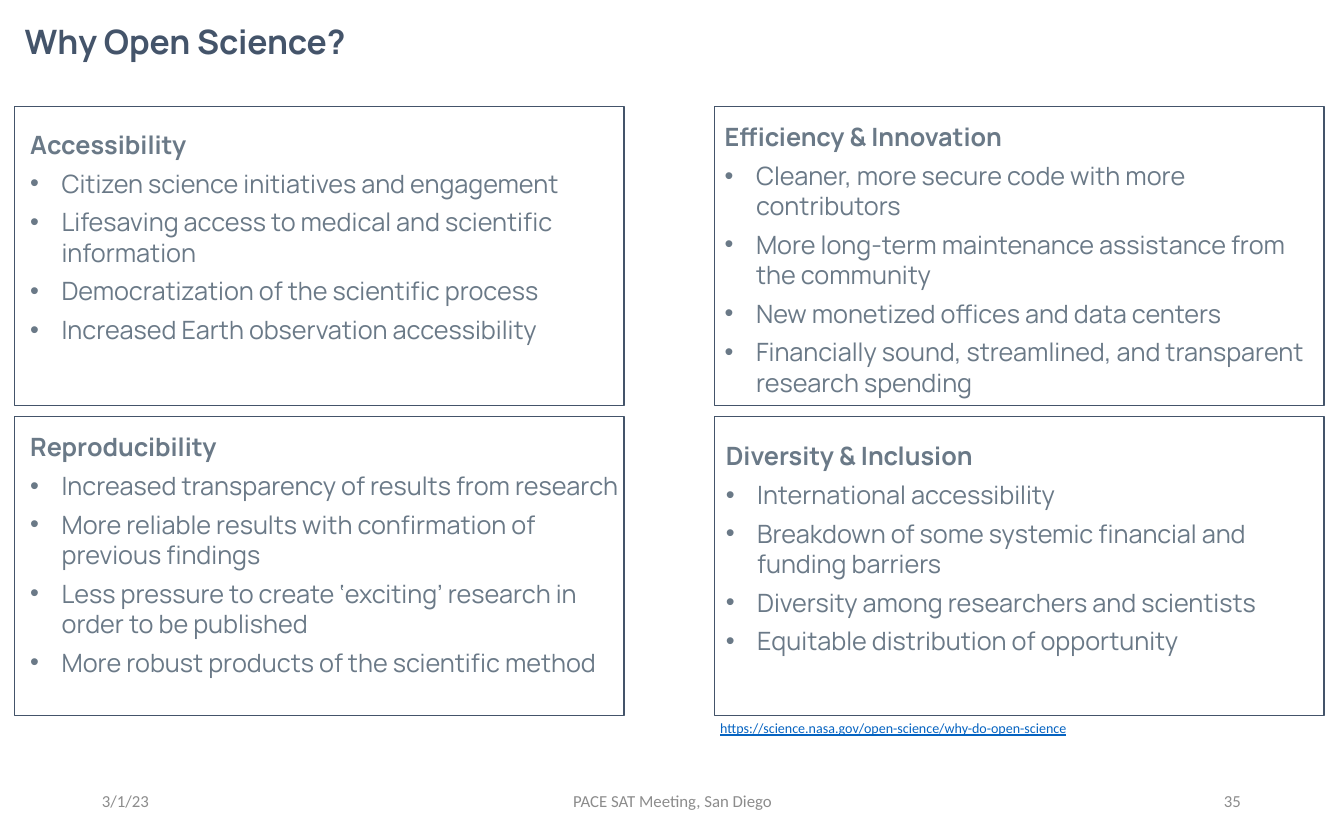
from lxml.etree import SubElement
from pptx import Presentation
from pptx.dml.color import RGBColor
from pptx.enum.shapes import MSO_SHAPE as Shape
from pptx.enum.text import MSO_ANCHOR as Anchor, PP_ALIGN as Align
from pptx.oxml.ns import qn
from pptx.util import Inches, Pt

NAVY, SLATE, GREY, BLUE = "44546A", "6A7987", "8C8C8C", "0563C1"
HEAD = dict(name="Manrope", size=Pt(16.2), bold=True)
BODY = dict(HEAD, bold=False)
TITLE = dict(HEAD, size=Pt(21.6))
FOOT = dict(name="Calibri", size=Pt(10.8))
LINK = dict(name="Calibri", size=Pt(9), underline=True)

# column, row, text box (left, top, width, height), heading, points
PANELS = [
    (1, 0, (6.38, 1.04, 5.49, 2.56), "Efficiency & Innovation", [
        "Cleaner, more secure code with more contributors",
        "More long-term maintenance assistance from the community",
        "New monetized offices and data centers",
        "Financially sound, streamlined, and transparent research spending"]),
    (0, 0, (0.18, 1.11, 5.4, 2.02), "Accessibility", [
        "Citizen science initiatives and engagement",
        "Lifesaving access to medical and scientific information",
        "Democratization of the scientific process",
        "Increased Earth observation accessibility"]),
    (0, 1, (0.18, 3.81, 5.49, 2.29), "Reproducibility", [
        "Increased transparency of results from research",
        "More reliable results with confirmation of previous findings",
        "Less pressure to create ‘exciting’ research in order to be published",
        "More robust products of the scientific method"]),
    (1, 1, (6.39, 3.89, 5.49, 2.02), "Diversity & Inclusion", [
        "International accessibility",
        "Breakdown of some systemic financial and funding barriers",
        "Diversity among researchers and scientists",
        "Equitable distribution of opportunity"]),
]
FOOTER = [
    ((0.82, 6.95, 2.7, 0.4), "3/1/23", Align.LEFT),
    ((3.98, 6.95, 4.05, 0.4), "PACE SAT Meeting, San Diego", Align.CENTER),
    ((8.47, 6.95, 2.7, 0.4), "35", Align.RIGHT),
]
LEFT, TOP, WIDE, HIGH = 0.13, 0.95, 5.44, 2.67
STEP_X, STEP_Y = 6.25, 2.77
INDENT = Inches(0.28)


def color(code):
    return RGBColor.from_string(code)


def add_frame(slide, box, anchor=Anchor.TOP):
    frame = slide.shapes.add_textbox(*map(Inches, box)).text_frame
    frame.word_wrap = True
    frame.vertical_anchor = anchor
    frame.margin_left = frame.margin_right = Inches(0.09)
    frame.margin_top = frame.margin_bottom = Inches(0.045)
    return frame


def write(para, text, style, tint, align=Align.LEFT):
    para.alignment = align
    run = para.add_run()
    run.text = text
    for key, value in style.items():
        setattr(run.font, key, value)
    run.font.color.rgb = color(tint)


def add_bullet(para):
    props = para._p.get_or_add_pPr()
    props.set("marL", str(INDENT))
    props.set("indent", str(-INDENT))
    SubElement(props, qn("a:buFont")).set("typeface", "Arial")
    SubElement(props, qn("a:buChar")).set("char", "•")


def add_panel(slide, col, row, box, head, points):
    frame = add_frame(slide, box)
    para = frame.paragraphs[0]
    para.space_after = Pt(5.4)
    write(para, head, HEAD, SLATE)
    for point in points:
        para = frame.add_paragraph()
        para.space_after = Pt(5.4)
        add_bullet(para)
        write(para, point, BODY, SLATE)

    border = slide.shapes.add_shape(
        Shape.RECTANGLE, Inches(LEFT + col * STEP_X),
        Inches(TOP + row * STEP_Y), Inches(WIDE), Inches(HIGH))
    border.shadow.inherit = False
    border.fill.background()
    border.line.color.rgb = color(NAVY)
    border.line.width = Pt(1)


def main():
    deck = Presentation()
    deck.slide_width, deck.slide_height = Inches(12), Inches(7.5)
    slide = deck.slides.add_slide(deck.slide_layouts[6])

    for box, text, align in FOOTER:
        frame = add_frame(slide, box, Anchor.MIDDLE)
        write(frame.paragraphs[0], text, FOOT, GREY, align)
    title = add_frame(slide, (0.13, 0.14, 3.51, 0.46))
    write(title.paragraphs[0], "Why Open Science?", TITLE, NAVY)
    source = add_frame(slide, (6.34, 6.38, 3.38, 0.25))
    write(source.paragraphs[0],
          "https://science.nasa.gov/open-science/why-do-open-science",
          LINK, BLUE)
    for panel in PANELS:
        add_panel(slide, *panel)

    deck.save("out.pptx")


if __name__ == "__main__":
    main()
